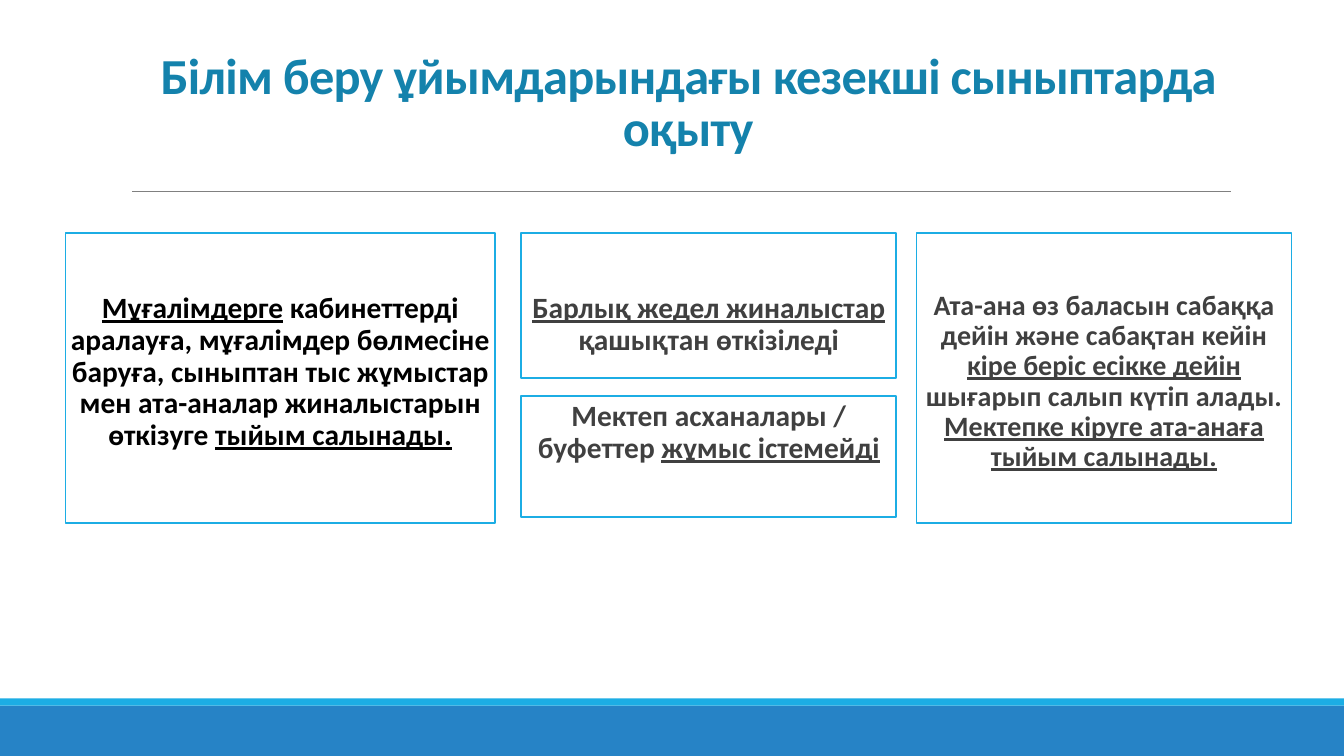
from pptx import Presentation
from pptx.dml.color import RGBColor
from pptx.enum.shapes import MSO_CONNECTOR, MSO_SHAPE
from pptx.enum.text import MSO_ANCHOR, PP_ALIGN
from pptx.oxml.ns import qn
from pptx.util import Inches, Pt
from lxml.etree import SubElement

THEME = {
    "font": "Calibri",
    "white": "FFFFFF", "black": "000000", "dark": "404040", "rule": "808080",
    "title": "1482AC", "accent": "1CADE4", "footer": "2683C6",
    "title_size": 36, "large": 21, "small": 20,
}

TITLE = "Білім беру ұйымдарындағы кезекші сыныптарда оқыту"
TEACHERS = [
    ("Мұғалімдерге", True),
    (" кабинеттерді аралауға, мұғалімдер бөлмесіне баруға, сыныптан тыс жұмыстар"
     " мен ата-аналар жиналыстарын өткізуге ", False),
    ("тыйым салынады.", True),
]
MEETINGS = [("Барлық жедел жиналыстар ", True), ("қашықтан өткізіледі", False)]
CANTEENS = [("Мектеп асханалары / буфеттер ", False), ("жұмыс істемейді", True)]
PARENTS = [
    ("Ата-ана өз баласын сабаққа дейін және сабақтан кейін ", False),
    ("кіре беріс есікке дейін ", True),
    ("шығарып салып күтіп алады. ", False),
    ("Мектепке кіруге ата-анаға тыйым салынады.", True),
]

SLIDE_WIDTH, SLIDE_HEIGHT = 13.33, 7.5
CARD_TOP, CARD_HEIGHT = 2.31, 2.88
MIDDLE_LEFT, RIGHT_LEFT, CARD_WIDTH = 5.17, 9.09, 3.72
CARDS = [
    ((0.65, CARD_TOP, 4.26, CARD_HEIGHT), TEACHERS, "large", "black", 0.6),
    ((MIDDLE_LEFT, CARD_TOP, CARD_WIDTH, CARD_HEIGHT / 2), MEETINGS, "large", "dark", 0.6),
    ((MIDDLE_LEFT, 3.93, CARD_WIDTH, 1.2), CANTEENS, "large", "dark", 0.05),
    ((RIGHT_LEFT, CARD_TOP, CARD_WIDTH, CARD_HEIGHT), PARENTS, "small", "dark", 0.58),
]
BANDS = [((0, 7, SLIDE_WIDTH, 0.5), "footer"), ((0, 6.93, SLIDE_WIDTH, 0.07), "accent")]


def color(name):
    return RGBColor.from_string(THEME[name])


def apply(target, values):
    for name, value in values.items():
        setattr(target, name, value)


def add_rectangle(page, place, fill, line=None):
    box = page.shapes.add_shape(MSO_SHAPE.RECTANGLE, *map(Inches, place))
    box.shadow.inherit = False
    box.fill.solid()
    box.fill.fore_color.rgb = color(fill)
    if line:
        box.line.color.rgb = color(line)
        box.line.width = Pt(1.25)
    else:
        box.line.fill.background()
    return box


def write(box, spans, size, ink, frame_format, para_format):
    frame = box.text_frame
    apply(frame, {"word_wrap": True, **frame_format})
    para = frame.paragraphs[0]
    apply(para, {"alignment": PP_ALIGN.CENTER, **para_format})
    for text, underline in spans:
        span = para.add_run()
        span.text = text
        apply(span.font, {"name": THEME["font"], "size": Pt(THEME[size]),
                          "bold": True, "underline": underline})
        span.font.color.rgb = color(ink)
    return para


def add_title(page):
    box = page.shapes.add_textbox(*map(Inches, (0.84, 0.87, 11.97, 0.73)))
    para = write(box, [(TITLE, False)], "title_size", "title",
                 {"vertical_anchor": MSO_ANCHOR.BOTTOM}, {"line_spacing": 0.85})
    para.runs[0].font._element.set("spc", "-50")


def add_rule(page):
    rule = page.shapes.add_connector(
        MSO_CONNECTOR.STRAIGHT, *map(Inches, (1.31, 1.9, 12.21, 1.9)))
    rule.line.color.rgb = color("rule")
    rule.line.width = Pt(0.5)
    SubElement(rule._element.spPr, qn("a:effectLst"))


def main():
    deck = Presentation()
    apply(deck, {"slide_width": Inches(SLIDE_WIDTH), "slide_height": Inches(SLIDE_HEIGHT)})
    page = deck.slides.add_slide(deck.slide_layouts[6])
    for place, fill in BANDS:
        add_rectangle(page, place, fill)
    add_rule(page)
    add_title(page)
    for place, spans, size, ink, top_inset in CARDS:
        box = add_rectangle(page, place, "white", "accent")
        write(box, spans, size, ink,
              {"vertical_anchor": MSO_ANCHOR.TOP, "margin_left": 0, "margin_right": 0,
               "margin_top": Inches(top_inset), "margin_bottom": Inches(0.05)},
              {"line_spacing": 0.9, "space_before": Pt(12), "space_after": Pt(2)})
    deck.save("out.pptx")


if __name__ == "__main__":
    main()
